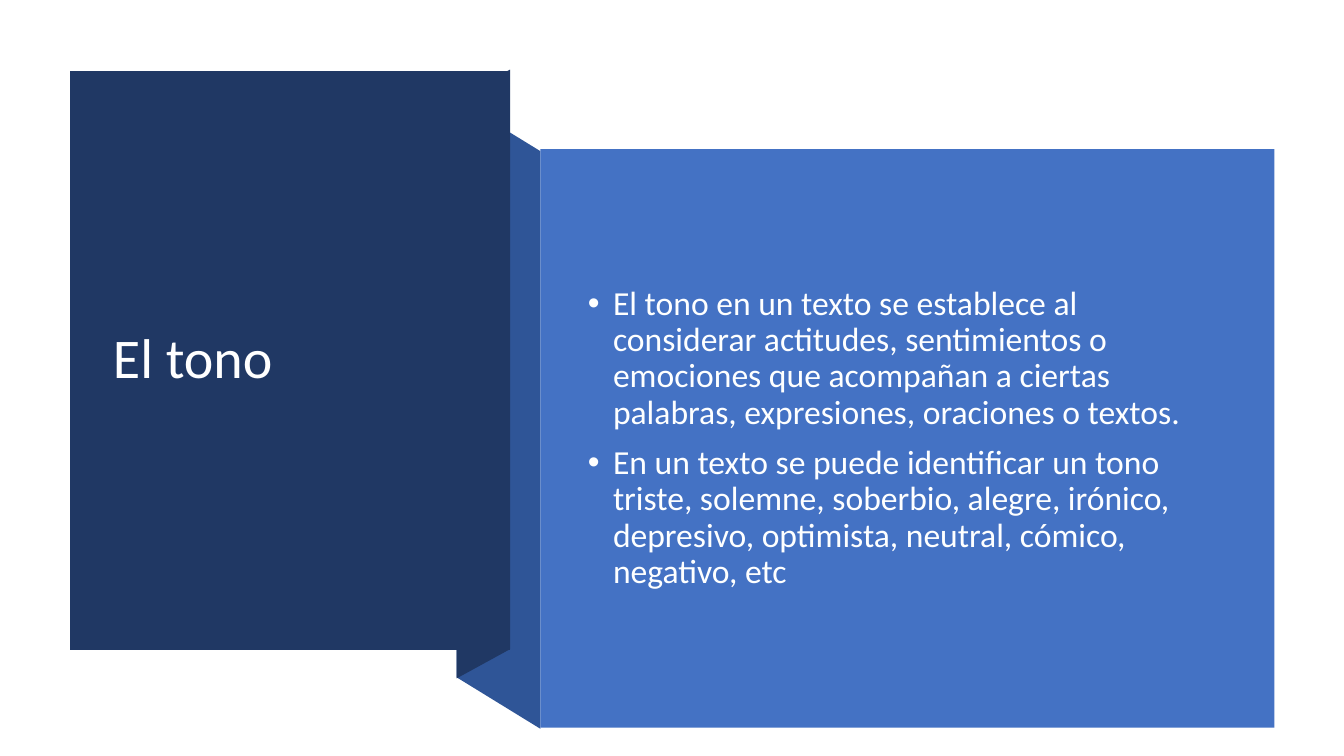
from lxml.etree import SubElement
from pptx import Presentation
from pptx.dml.color import RGBColor
from pptx.enum.shapes import MSO_SHAPE
from pptx.enum.text import MSO_ANCHOR, MSO_AUTO_SIZE, PP_ALIGN
from pptx.oxml.ns import qn
from pptx.util import Inches, Pt

NAVY = RGBColor(0x20, 0x38, 0x64)
FOLD_BLUE = RGBColor(0x2F, 0x55, 0x97)
PANEL_BLUE = RGBColor(0x44, 0x72, 0xC4)
WHITE = RGBColor(0xFF, 0xFF, 0xFF)
OFF_WHITE = RGBColor(0xFE, 0xFF, 0xFF)
FONT = "Calibri"

# Boxes are left, top, width, height in inches
TITLE_PANEL = (0.69, 0.7, 4.37, 5.75)
BODY_PANEL = (5.36, 1.48, 7.28, 5.74)
FOLD_LEFT = 4.53

POINTS = [
    "El tono en un texto se establece al considerar actitudes, sentimientos o "
    "emociones que acompañan a ciertas palabras, expresiones, oraciones o textos.",
    "En un texto se puede identificar un tono triste, solemne, soberbio, alegre, "
    "irónico, depresivo, optimista, neutral, cómico, negativo, etc",
]


def paint(shape, color):
    shape.shadow.inherit = False
    shape.fill.solid()
    shape.fill.fore_color.rgb = color
    shape.line.fill.background()


def add_outline(page, corners, color):
    points = [(Inches(x), Inches(y)) for x, y in corners]
    builder = page.shapes.build_freeform(*points[0], scale=1.0)
    builder.add_line_segments(points[1:], close=True)
    paint(builder.convert_to_shape(), color)


def add_fold_side(page, near, far, color):
    """Draw a slanted strip between two upright edges (x, top, bottom)."""
    (x1, top1, bottom1), (x2, top2, bottom2) = near, far
    add_outline(page, [(x1, top1), (x2, top2), (x2, bottom2), (x1, bottom1)], color)


def place_placeholder(holder, box, inset_x, inset_y):
    """Inset a placeholder in its panel and bring it to the front."""
    left, top, width, height = box
    holder.left, holder.top = Inches(left + inset_x), Inches(top + inset_y)
    holder.width = Inches(width - 2 * inset_x)
    holder.height = Inches(height - 2 * inset_y)
    holder.element.getparent().append(holder.element)
    frame = holder.text_frame
    frame.word_wrap = True
    frame.auto_size = MSO_AUTO_SIZE.NONE
    frame.vertical_anchor = MSO_ANCHOR.MIDDLE
    return frame


def write(para, text, size, color, space_before=0):
    para.alignment = PP_ALIGN.LEFT
    para.line_spacing = 0.9
    para.space_before = Pt(space_before)
    span = para.add_run()
    span.text = text
    span.font.name = FONT
    span.font.size = Pt(size)
    span.font.color.rgb = color


def add_bullet(para):
    props = para._p.get_or_add_pPr()
    props.set("marL", str(Inches(0.25)))
    props.set("indent", str(Inches(-0.25)))
    SubElement(props, qn("a:buFont")).set("typeface", "Arial")
    SubElement(props, qn("a:buChar")).set("char", "•")


def build_fold(page, title_box, body_box):
    title_right = title_box[0] + title_box[2]
    body_left, body_top, _, body_height = body_box
    add_fold_side(page, (FOLD_LEFT, 0.99, 6.72),
                  (body_left, body_top + 0.02, body_top + body_height + 0.01), FOLD_BLUE)
    add_fold_side(page, (FOLD_LEFT, 0.98, 6.73), (title_right, 0.69, 6.44), NAVY)


def build_title(page, box):
    left, top, width, height = box
    right, bottom = left + width, top + height
    add_outline(page, [(left, top), (right, top), (right, bottom), (left, bottom)], NAVY)
    frame = place_placeholder(page.shapes.title, box, 0.33, 0.38)
    write(frame.paragraphs[0], "El tono", 40, WHITE)


def build_body(page, box):
    panel = page.shapes.add_shape(MSO_SHAPE.RECTANGLE, *map(Inches, box))
    paint(panel, PANEL_BLUE)
    frame = place_placeholder(page.placeholders[1], box, 0.37, 0.5)
    for index, text in enumerate(POINTS):
        para = frame.add_paragraph() if index else frame.paragraphs[0]
        write(para, text, 24, OFF_WHITE, space_before=10)
        add_bullet(para)


def main():
    deck = Presentation()
    deck.slide_width, deck.slide_height = Inches(13.33), Inches(7.5)
    page = deck.slides.add_slide(deck.slide_layouts[1])
    build_fold(page, TITLE_PANEL, BODY_PANEL)
    build_title(page, TITLE_PANEL)
    build_body(page, BODY_PANEL)
    deck.save("out.pptx")


if __name__ == "__main__":
    main()
